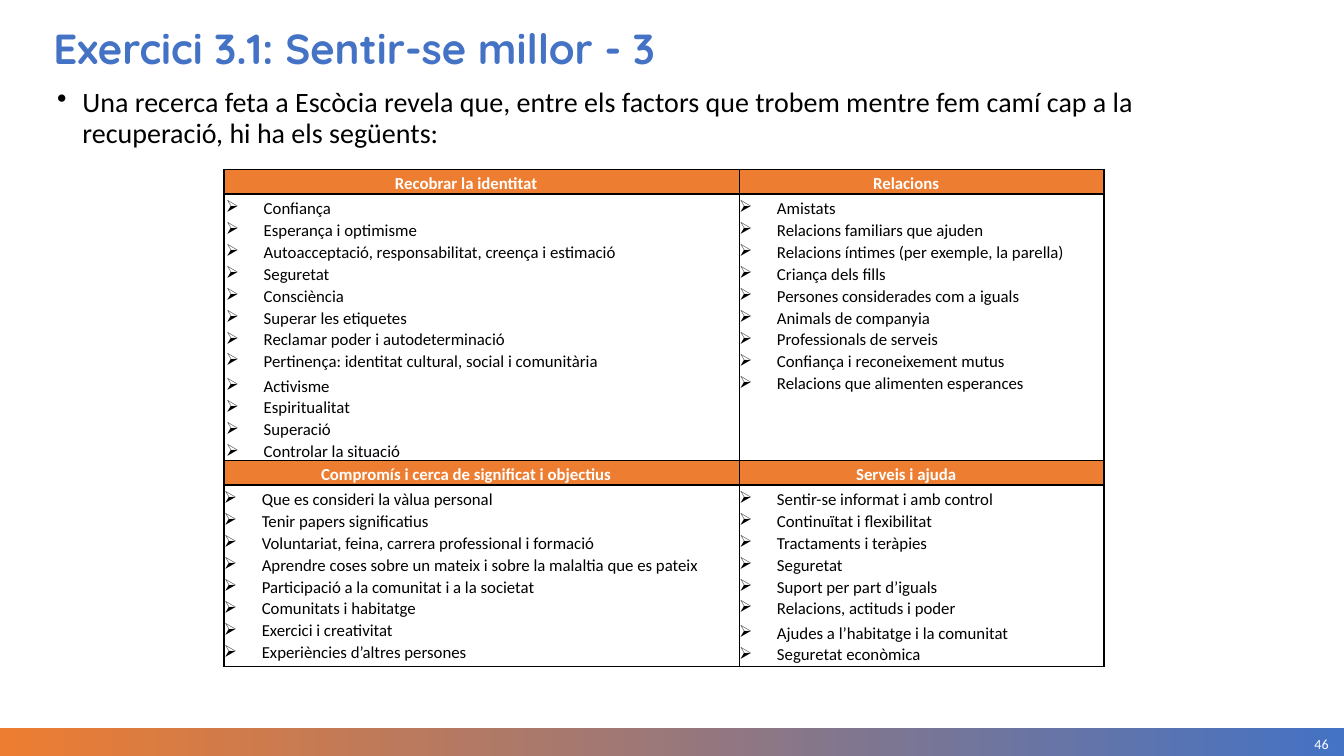
from lxml import etree
from pptx import Presentation
from pptx.dml.color import RGBColor
from pptx.enum import shapes, text
from pptx.oxml import ns
from pptx.util import Pt

ORANGE = RGBColor(0xED, 0x7D, 0x31)
BLUE = RGBColor(0x44, 0x72, 0xC4)
WHITE = RGBColor(0xFF, 0xFF, 0xFF)
BLACK = RGBColor(0, 0, 0)
SLIDE_W, SLIDE_H = 960, 540

TITLE = "Exercici 3.1: Sentir-se millor - 3"
INTRO = ("Una recerca feta a Escòcia revela que, entre els factors que trobem "
         "mentre fem camí cap a la recuperació, hi ha els següents:")
COLUMN_WIDTHS = (368, 260.6)
ROW_HEIGHTS = (17.4, 190.2, 17.4, 129.6)
# Each row of themes: (heading, factors, text indent) for the left and right columns
THEMES = [
    [("Recobrar la identitat",
      ["Confiança", "Esperança i optimisme",
       "Autoacceptació, responsabilitat, creença i estimació",
       "Seguretat", "Consciència", "Superar les etiquetes",
       "Reclamar poder i autodeterminació",
       "Pertinença: identitat cultural, social i comunitària",
       "Activisme", "Espiritualitat", "Superació", "Controlar la situació"], 28.4),
     ("Relacions",
      ["Amistats", "Relacions familiars que ajuden",
       "Relacions íntimes (per exemple, la parella)",
       "Criança dels fills", "Persones considerades com a iguals",
       "Animals de companyia", "Professionals de serveis",
       "Confiança i reconeixement mutus",
       "Relacions que alimenten esperances"], 27)],
    [("Compromís i cerca de significat i objectius",
      ["Que es consideri la vàlua personal", "Tenir papers significatius",
       "Voluntariat, feina, carrera professional i formació",
       "Aprendre coses sobre un mateix i sobre la malaltia que es pateix",
       "Participació a la comunitat i a la societat",
       "Comunitats i habitatge", "Exercici i creativitat",
       "Experiències d’altres persones"], 27),
     ("Serveis i ajuda",
      ["Sentir-se informat i amb control", "Continuïtat i flexibilitat",
       "Tractaments i teràpies", "Seguretat", "Suport per part d’iguals",
       "Relacions, actituds i poder", "Ajudes a l’habitatge i la comunitat",
       "Seguretat econòmica"], 27)],
]
# Factors followed by a small gap
GROUP_ENDS = ("Pertinença: identitat cultural, social i comunitària",
              "Relacions, actituds i poder")


def format_runs(paragraph, size, color, bold=False, font="Calibri"):
    for run in paragraph.runs:
        run.font.size, run.font.bold, run.font.name = Pt(size), bold, font
        run.font.color.rgb = color


def add_bullet(paragraph, char, indent, hanging):
    props = paragraph._p.get_or_add_pPr()
    props.set("marL", str(Pt(indent)))
    props.set("indent", str(-Pt(hanging)))
    bullet_color = etree.SubElement(props, ns.qn("a:buClr"))
    etree.SubElement(bullet_color, ns.qn("a:srgbClr"), val=str(BLACK))
    etree.SubElement(props, ns.qn("a:buChar"), char=char)


def add_borders(cell):
    props = cell._tc.get_or_add_tcPr()
    for side in ("lnL", "lnR", "lnT", "lnB"):
        border = etree.SubElement(props, ns.qn("a:" + side), w=str(Pt(1)))
        fill = etree.SubElement(border, ns.qn("a:solidFill"))
        etree.SubElement(fill, ns.qn("a:srgbClr"), val=str(BLACK))


def place_title(slide, left, top, width, height):
    title = slide.shapes.title
    title.left, title.top, title.width, title.height = map(Pt, (left, top, width, height))
    frame = title.text_frame
    frame.text = TITLE
    frame.auto_size = text.MSO_AUTO_SIZE.NONE
    frame.vertical_anchor = text.MSO_ANCHOR.MIDDLE
    heading = frame.paragraphs[0]
    heading.alignment = text.PP_ALIGN.LEFT
    heading.line_spacing = 0.9
    format_runs(heading, 30, BLUE, True, "Quicksand")


def add_intro(slide, left, top, width, height):
    frame = slide.shapes.add_textbox(*map(Pt, (left, top, width, height))).text_frame
    frame.word_wrap = True
    frame.text = INTRO
    intro = frame.paragraphs[0]
    intro.line_spacing = 0.9
    add_bullet(intro, "•", 18, 18)
    format_runs(intro, 20, BLACK)


def fill_heading(cell, heading):
    cell.fill.solid()
    cell.fill.fore_color.rgb = ORANGE
    cell.margin_right = Pt(22)
    cell.text_frame.text = heading
    paragraph = cell.text_frame.paragraphs[0]
    paragraph.alignment = text.PP_ALIGN.CENTER
    paragraph.line_spacing = 1.07
    format_runs(paragraph, 12, WHITE, True)


def fill_factors(cell, factors, indent):
    cell.fill.background()
    cell.text_frame.text = "\n".join(factors)
    for paragraph in cell.text_frame.paragraphs:
        ends_group = paragraph.text in GROUP_ENDS
        paragraph.line_spacing = 1.03 if ends_group else 1.07
        if ends_group:
            paragraph.space_after = Pt(2.2)
        add_bullet(paragraph, "➢", indent, 27)
        format_runs(paragraph, 12, BLACK)


def add_factor_table(slide, left, top):
    frame = slide.shapes.add_table(
        len(ROW_HEIGHTS), len(COLUMN_WIDTHS), Pt(left), Pt(top),
        Pt(sum(COLUMN_WIDTHS)), Pt(sum(ROW_HEIGHTS)))
    table = frame.table
    table.first_row = table.horz_banding = False
    for column, width in zip(table.columns, COLUMN_WIDTHS):
        column.width = Pt(width)
    for row, height in zip(table.rows, ROW_HEIGHTS):
        row.height = Pt(height)
    for cell in table.iter_cells():
        cell.margin_left = cell.margin_bottom = 0
        cell.margin_top, cell.margin_right = Pt(2.2), Pt(0.7)
        add_borders(cell)
    for band, themes in enumerate(THEMES):
        for col, (heading, factors, indent) in enumerate(themes):
            fill_heading(table.cell(2 * band, col), heading)
            fill_factors(table.cell(2 * band + 1, col), factors, indent)


def add_footer(slide, left, top, width, height):
    # Gradient band
    band = slide.shapes.add_shape(shapes.MSO_SHAPE.RECTANGLE,
                                  *map(Pt, (left, top, width, height)))
    band.shadow.inherit = False
    band.line.fill.background()
    band.fill.gradient()
    band.fill.gradient_angle = 0
    for stop, color, position in zip(band.fill.gradient_stops, (ORANGE, BLUE), (0, 1)):
        stop.color.rgb, stop.position = color, position
    # Page number
    number_box = slide.shapes.add_textbox(
        Pt(left + width - 140.6), Pt(top + 2.9), Pt(129.6), Pt(17.3))
    frame = number_box.text_frame
    frame.margin_left = frame.margin_right = frame.margin_top = frame.margin_bottom = 0
    frame.word_wrap = True
    frame.vertical_anchor = text.MSO_ANCHOR.MIDDLE
    frame.text = "46"
    frame.paragraphs[0].alignment = text.PP_ALIGN.RIGHT
    format_runs(frame.paragraphs[0], 10, WHITE)


def main():
    deck = Presentation()
    deck.slide_width, deck.slide_height = Pt(SLIDE_W), Pt(SLIDE_H)
    slide = deck.slides.add_slide(deck.slide_layouts[5])
    add_footer(slide, 0, 520, SLIDE_W, 20)
    add_intro(slide, 33.8, 59.8, 846, 53.3)
    place_title(slide, 31, 19.4, 771, 33.8)
    add_factor_table(slide, 160, 121)
    deck.save("out.pptx")


if __name__ == "__main__":
    main()
